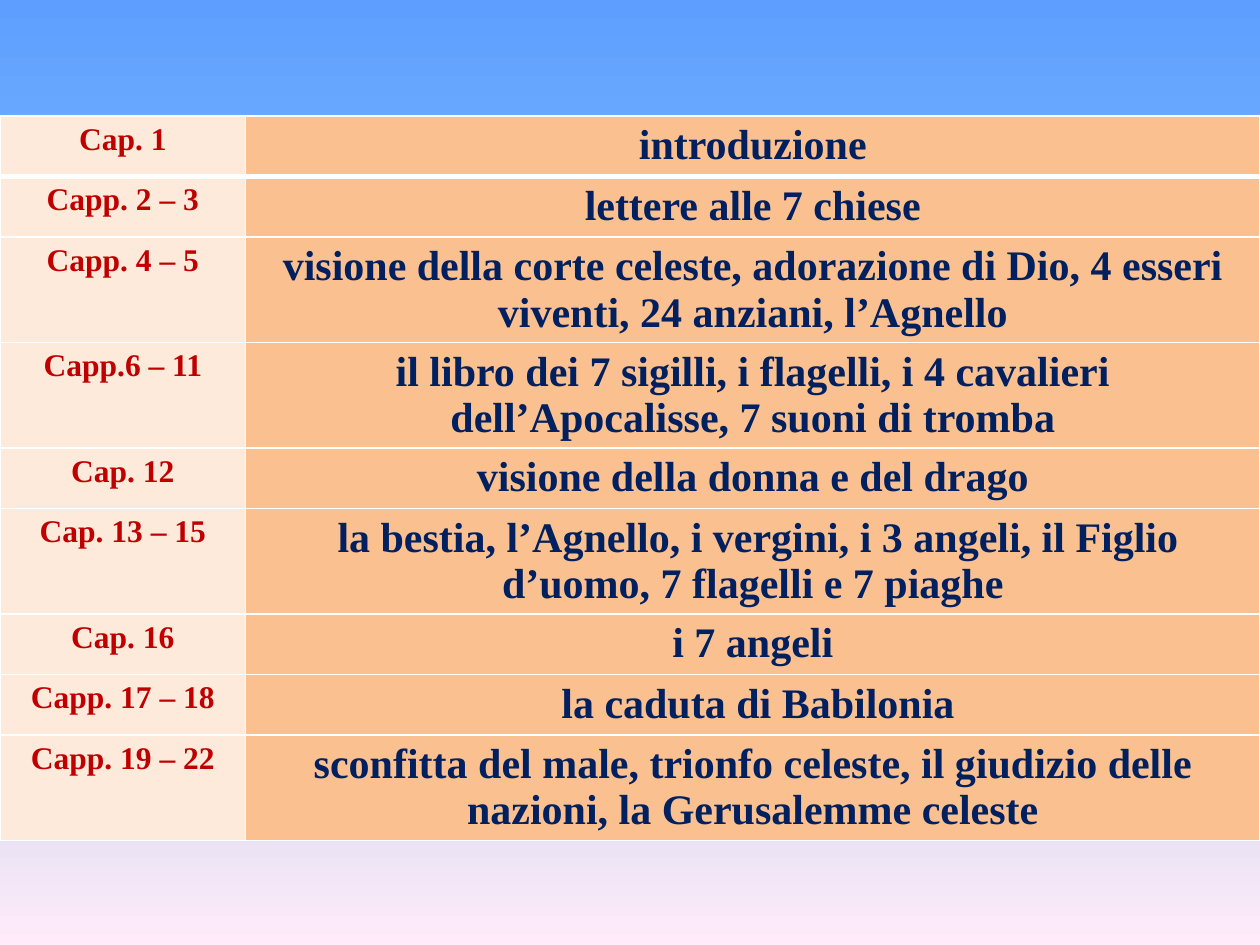
from dataclasses import dataclass

from lxml.etree import SubElement
from pptx import Presentation
from pptx.dml.color import RGBColor
from pptx.enum.text import PP_ALIGN
from pptx.oxml.ns import qn
from pptx.util import Inches, Pt


@dataclass(frozen=True)
class Theme:
    font: str = "Times New Roman"
    chapter_size: int = 18
    content_size: int = 24
    chapter_color: str = "C00000"
    content_color: str = "002060"
    chapter_fill: str = "FDEADA"
    content_fill: str = "FAC090"
    border: str = "FFFFFF"
    sky: tuple = ((0, "5E9EFF"), (40, "85C2FF"), (70, "C4D6EB"), (100, "FFEBFA"))


theme = Theme()


def add_borders(cell, top, bottom):
    """Draw the cell's four edges; top and bottom are widths in points."""
    properties = cell._tc.get_or_add_tcPr()
    edges = (("a:lnL", 1), ("a:lnR", 1), ("a:lnT", top), ("a:lnB", bottom))
    for position, (tag, width) in enumerate(edges):
        edge = SubElement(properties, qn(tag), w=str(Pt(width)))
        line_fill = SubElement(edge, qn("a:solidFill"))
        SubElement(line_fill, qn("a:srgbClr"), val=theme.border)
        properties.insert(position, edge)


# Slide
prs = Presentation()
prs.slide_width, prs.slide_height = Inches(10), Inches(7.5)
slide = prs.slides.add_slide(prs.slide_layouts[6])

# Sky gradient, running from top to bottom
sky = slide.background.fill
sky.gradient()
sky.gradient_angle = 270
stops = slide.element.find(".//" + qn("a:gsLst"))
for stop in list(stops):
    stops.remove(stop)
for percent, color in theme.sky:
    stop = SubElement(stops, qn("a:gs"), pos=str(percent * 1000))
    SubElement(stop, qn("a:srgbClr"), val=color)

# Chapters of the book: chapter range, content, lines of text
chapters = [
    ("Cap. 1", "introduzione", 1),
    ("Capp. 2 – 3", "lettere alle 7 chiese", 1),
    ("Capp. 4 – 5", "visione della corte celeste, adorazione di Dio, "
     "4 esseri viventi, 24 anziani, l’Agnello", 2),
    ("Capp.6 – 11", "il libro dei 7 sigilli, i flagelli, i 4 cavalieri "
     "dell’Apocalisse, 7 suoni di tromba", 2),
    ("Cap. 12", "visione della donna e del drago", 1),
    ("Cap. 13 – 15", " la bestia, l’Agnello, i vergini, i 3 angeli, il Figlio "
     "d’uomo, 7 flagelli e 7 piaghe", 2),
    ("Cap. 16", "i 7 angeli", 1),
    ("Capp. 17 – 18", " la caduta di Babilonia", 1),
    ("Capp. 19 – 22", "sconfitta del male, trionfo celeste, il giudizio delle "
     "nazioni, la Gerusalemme celeste", 2),
]
row_heights = {1: Inches(0.48), 2: Inches(0.82)}
column_widths = (Inches(1.95), Inches(8.05))
column_styles = (
    (theme.chapter_size, theme.chapter_color, theme.chapter_fill),
    (theme.content_size, theme.content_color, theme.content_fill),
)

# Chapter table
outline = slide.shapes.add_table(
    len(chapters), len(column_widths), Inches(0), Inches(0.92), sum(column_widths),
    sum(row_heights[lines] for _, _, lines in chapters)).table
for column, width in zip(outline.columns, column_widths):
    column.width = width

for row_index, (chapter, content, lines) in enumerate(chapters):
    outline.rows[row_index].height = row_heights[lines]
    for column_index, text in enumerate((chapter, content)):
        size, color, fill = column_styles[column_index]
        cell = outline.cell(row_index, column_index)
        cell.fill.solid()
        cell.fill.fore_color.rgb = RGBColor.from_string(fill)
        # A thick rule separates the first row from the second
        add_borders(cell, top=3 if row_index == 1 else 1,
                    bottom=3 if row_index == 0 else 1)
        paragraph = cell.text_frame.paragraphs[0]
        paragraph.alignment = PP_ALIGN.CENTER
        run = paragraph.add_run()
        run.text = text
        run.font.name = theme.font
        run.font.size = Pt(size)
        run.font.bold = True
        run.font.color.rgb = RGBColor.from_string(color)

prs.save("out.pptx")
